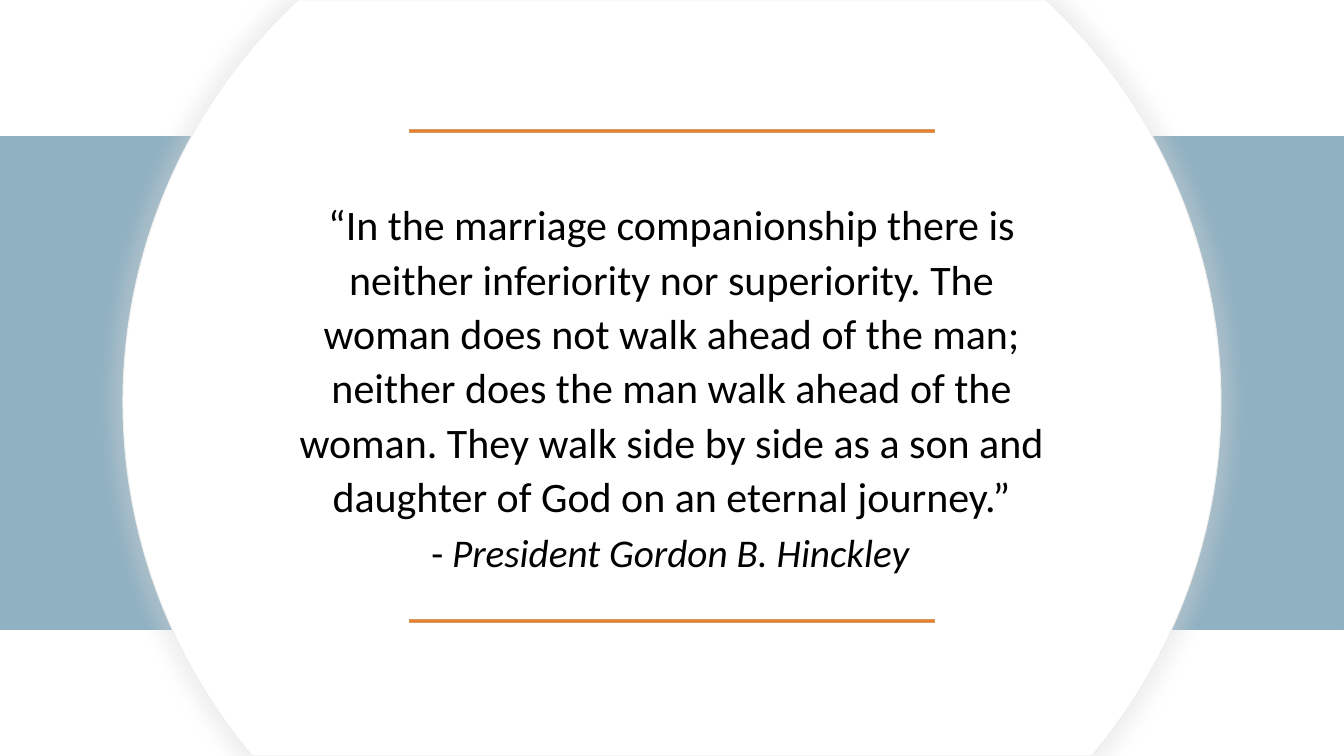
"""Build a quote slide: a white disc over a blue band, with two orange rules."""
from math import asin, cos, pi, sin, tan

from lxml import etree
from pptx import Presentation
from pptx.dml.color import RGBColor
from pptx.enum.shapes import MSO_SHAPE
from pptx.enum.text import MSO_ANCHOR, MSO_AUTO_SIZE, PP_ALIGN
from pptx.oxml import parse_xml
from pptx.oxml.ns import nsdecls, qn
from pptx.util import Cm, Pt

RECT = MSO_SHAPE.RECTANGLE
BOTTOM = MSO_ANCHOR.BOTTOM
NO_FIT = MSO_AUTO_SIZE.NONE
CENTER, LEFT = PP_ALIGN.CENTER, PP_ALIGN.LEFT
TITLE_ONLY = 5
SLIDE_W, SLIDE_H = 33.87, 19.05
FONT = "Calibri"
QUOTE = (
    "“In the marriage companionship there is neither inferiority nor superiority. "
    "The woman does not walk ahead of the man; neither does the man walk ahead of "
    "the woman. They walk side by side as a son and daughter of God on an eternal "
    "journey.”"
)


def rgb(value):
    """Return the colour for a hex string."""
    return RGBColor.from_string(value)


def paint(sp, fill, line):
    """Give a shape a flat fill and a thin outline without a shadow."""
    sp.shadow.inherit = False
    sp.fill.solid()
    sp.fill.fore_color.rgb = rgb(fill)
    sp.line.color.rgb = rgb(line)
    sp.line.width = Pt(0.75)


def add_bar(s, box, fill, line):
    """Add a painted rectangle filling the box."""
    sp = s.shapes.add_shape(RECT, *map(Cm, box))
    paint(sp, fill, line)


def add_glow(sp, color, opacity, blur, scale):
    """Add a soft centred shadow, slightly larger than its shape."""
    size = scale * 1000
    shadow = parse_xml(
        f'<a:outerShdw {nsdecls("a")} blurRad="{Pt(blur)}" dist="0" dir="0" '
        f'sx="{size}" sy="{size}" algn="ctr" rotWithShape="0"/>'
    )
    clr = etree.SubElement(shadow, qn("a:srgbClr"), val=color)
    etree.SubElement(clr, qn("a:alpha"), val=str(opacity * 1000))
    sp._element.spPr.find(qn("a:effectLst")).append(shadow)


def bend(segment, center, radius, start, end):
    """Turn a straight path segment into a circular arc between two angles."""
    reach = radius * 4 / 3 * tan((end - start) / 4)
    segment.tag = qn("a:cubicBezTo")
    for i, (angle, pull) in enumerate(((start, reach), (end, -reach))):
        x = center[0] + radius * cos(angle) - pull * sin(angle)
        y = center[1] + radius * sin(angle) + pull * cos(angle)
        pt = etree.Element(qn("a:pt"), x=str(Cm(x)), y=str(Cm(y)))
        segment.insert(i, pt)


def add_disc(s, box, center_y):
    """Add a circle as wide as the box, cut off at its top and bottom."""
    left, top, width, height = box
    radius = width / 2
    upper = asin((top - center_y) / radius)
    lower = asin((top + height - center_y) / radius)
    angles = [pi - upper, upper, 0, lower, pi - lower, pi, pi - upper]
    points = [
        (Cm(left + radius + radius * cos(a)), Cm(center_y + radius * sin(a)))
        for a in angles
    ]
    builder = s.shapes.build_freeform(*points[0])
    builder.add_line_segments(points[1:], close=True)
    sp = builder.convert_to_shape()
    segments = list(sp._element.iter(qn("a:lnTo")))
    for i in (1, 2, 4, 5):
        bend(segments[i], (radius, center_y - top), radius, angles[i], angles[i + 1])
    paint(sp, "FFFFFF", "EFEFEF")
    add_glow(sp, "D8D8D8", 37, 11, 102)


def add_rules(s, box):
    """Add an orange rule at the top and at the bottom of the box."""
    left, top, width, height = box
    thickness = 0.08
    for y in (top, top + height - thickness):
        add_bar(s, (left, y, width, thickness), "ED7D31", "D09D5C")


def fill_text(sp, box, runs, size, align):
    """Place a text shape in the box and write its runs from the bottom up."""
    sp.left, sp.top, sp.width, sp.height = map(Cm, box)
    tf = sp.text_frame
    tf.word_wrap = True
    tf.auto_size = NO_FIT
    tf.vertical_anchor = BOTTOM
    p = tf.paragraphs[0]
    p.alignment = align
    for text, italic in runs:
        r = p.add_run()
        r.text = text
        r.font.name = FONT
        r.font.size = Pt(size)
        r.font.italic = italic
        r.font.color.rgb = rgb("000000")
    return p


def add_quote(s, box):
    """Write the quote in the title and its speaker below it."""
    left, top, width, height = box
    p = fill_text(s.shapes.title, (left, top, width, 8.76), [(QUOTE, False)], 30, CENTER)
    p.line_spacing = 1.08
    credit_h = 2.64
    credit = (left + 3.38, top + height - credit_h, 13.21, credit_h)
    sp = s.shapes.add_textbox(*map(Cm, credit))
    runs = [("- ", False), ("President Gordon B. Hinckley", True)]
    fill_text(sp, credit, runs, 28, LEFT)


def main():
    """Build and save the slide."""
    prs = Presentation()
    prs.slide_width, prs.slide_height = Cm(SLIDE_W), Cm(SLIDE_H)
    s = prs.slides.add_slide(prs.slide_layouts[TITLE_ONLY])
    title = s.shapes.title._element
    add_bar(s, (0, 3.43, SLIDE_W, 12.44), "90B1C2", "90B1C2")
    add_disc(s, (3.1, 0, 27.67, SLIDE_H), 10.13)
    add_rules(s, (10.33, 3.27, 13.22, 12.43))
    s.shapes._spTree.append(title)
    add_quote(s, (7.24, 4.5, 19.38, 10.13))
    prs.save("out.pptx")


if __name__ == "__main__":
    main()
